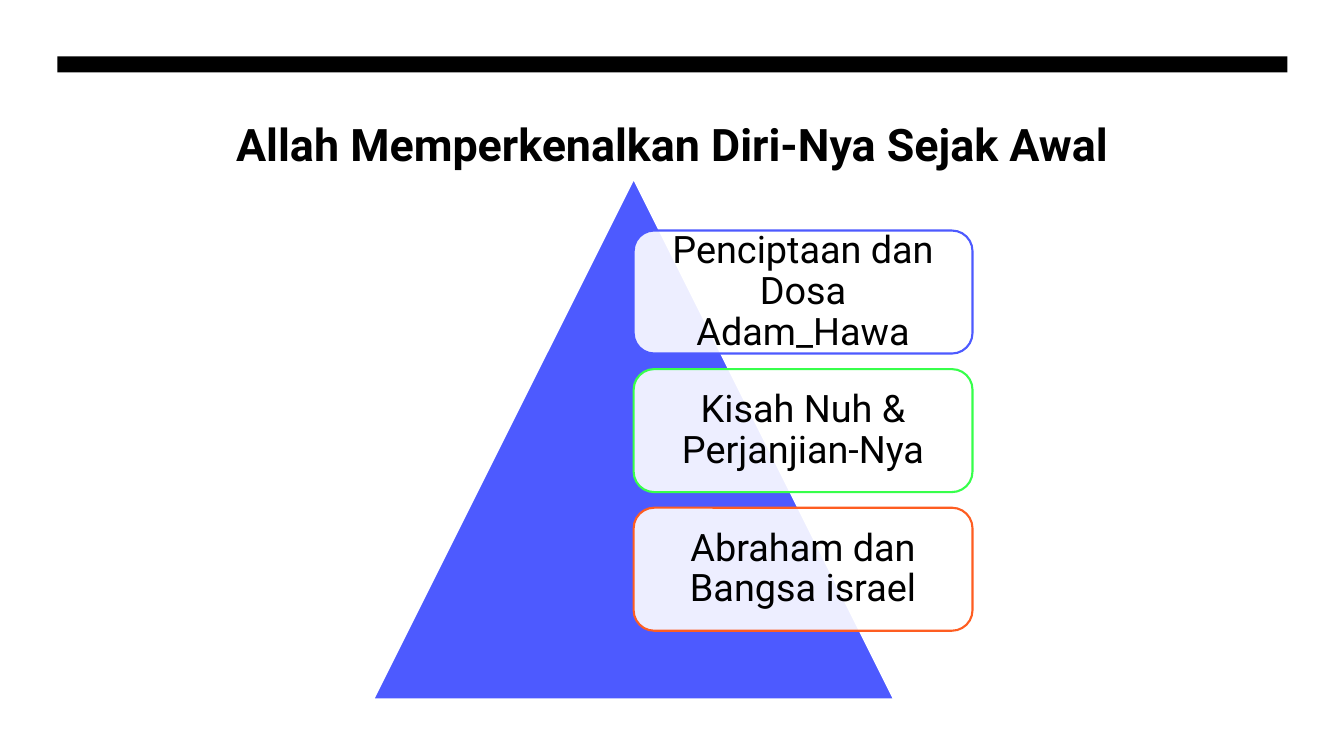
from lxml import etree
from pptx import Presentation
from pptx.dml.color import RGBColor
from pptx.enum.shapes import MSO_SHAPE
from pptx.enum.text import MSO_ANCHOR, MSO_AUTO_SIZE, PP_ALIGN
from pptx.oxml.ns import qn
from pptx.util import Inches, Pt

CENTER, MIDDLE = PP_ALIGN.CENTER, MSO_ANCHOR.MIDDLE
BAR, TRIANGLE, CARD = (MSO_SHAPE.RECTANGLE, MSO_SHAPE.ISOSCELES_TRIANGLE,
                       MSO_SHAPE.ROUNDED_RECTANGLE)

# Content
TITLE = "Allah Memperkenalkan Diri-Nya Sejak Awal"
STORIES = [
    ("Penciptaan dan Dosa Adam_Hawa", "blue"),
    ("Kisah Nuh & Perjanjian-Nya", "green"),
    ("Abraham dan Bangsa israel", "orange"),
]
COLORS = {"black": "000000", "white": "FFFFFF", "blue": "4D5AFF",
          "green": "37FF4B", "orange": "FE5D21"}
FONT = "Roboto"

# Layout in inches
SLIDE_W, SLIDE_H = 13.33, 7.5
MARGIN, CONTENT_W = 0.57, 12.2
BAR_TOP, BAR_H = 0.56, 0.16
TITLE_TOP, TITLE_H = 1.07, 0.7
PYRAMID_LEFT, PYRAMID_TOP, PYRAMID_SIZE = 3.7, 1.8, 5.17
PYRAMID_TOP = TITLE_TOP + TITLE_H
CARD_LEFT = PYRAMID_LEFT + PYRAMID_SIZE / 2
CARD_W = PYRAMID_SIZE * 0.65
CARD_TOP = PYRAMID_TOP + PYRAMID_SIZE * 0.1
CARD_H, CARD_PITCH = 1.22, 1.375
CARD_INSET = 0.11


def color(name):
    return RGBColor.from_string(COLORS[name])


def add_filled(slide, kind, box, fill, outline=None):
    shape = slide.shapes.add_shape(kind, *map(Inches, box))
    shape.shadow.inherit = False
    shape.fill.solid()
    shape.fill.fore_color.rgb = color(fill)
    if outline:
        shape.line.color.rgb = color(outline)
        shape.line.width = Pt(1.5)
    else:
        shape.line.fill.background()
    return shape


def write(shape, text, size, bold=False, inset=0.1):
    frame = shape.text_frame
    frame.text = text
    frame.word_wrap = True
    frame.auto_size = MSO_AUTO_SIZE.NONE
    frame.vertical_anchor = MIDDLE
    frame.margin_left = frame.margin_right = Inches(inset)
    frame.margin_top = frame.margin_bottom = Inches(inset)
    paragraph = frame.paragraphs[0]
    paragraph.alignment = CENTER
    font = paragraph.runs[0].font
    font.name, font.size, font.bold = FONT, Pt(size), bold
    font.color.rgb = color("black")
    return paragraph


def set_opacity(shape, percent):
    rgb = shape.fill._xPr.find(qn("a:solidFill"))[0]
    etree.SubElement(rgb, qn("a:alpha")).set("val", str(percent * 1000))


def main():
    prs = Presentation()
    prs.slide_width, prs.slide_height = Inches(SLIDE_W), Inches(SLIDE_H)
    slide = prs.slides.add_slide(prs.slide_layouts[5])

    # Top bar and title
    add_filled(slide, BAR, (MARGIN, BAR_TOP, CONTENT_W, BAR_H), "black")
    title = slide.shapes.title
    title.left, title.top = Inches(MARGIN), Inches(TITLE_TOP)
    title.width, title.height = Inches(CONTENT_W), Inches(TITLE_H)
    write(title, TITLE, 32, bold=True)

    # Pyramid
    add_filled(slide, TRIANGLE,
               (PYRAMID_LEFT, PYRAMID_TOP, PYRAMID_SIZE, PYRAMID_SIZE),
               "blue", "white")

    # Story cards
    for row, (story, outline) in enumerate(STORIES):
        top = CARD_TOP + row * CARD_PITCH
        card = add_filled(slide, CARD, (CARD_LEFT, top, CARD_W, CARD_H),
                          "white", outline)
        set_opacity(card, 90)
        write(card, story, 27, inset=CARD_INSET).line_spacing = 0.9

    prs.save("out.pptx")


if __name__ == "__main__":
    main()
